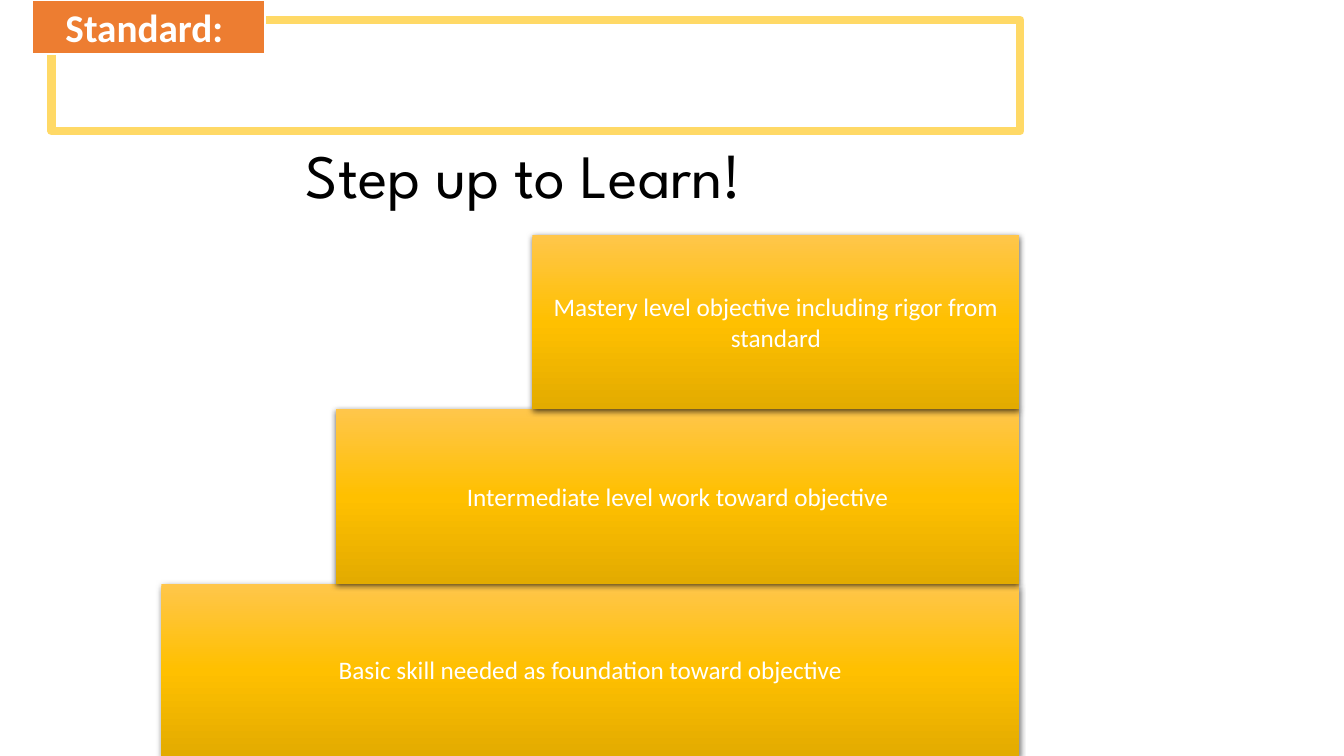
import copy

import pptx
import pptx.dml.color
import pptx.enum.shapes
import pptx.enum.text
import pptx.oxml
import pptx.oxml.ns
import pptx.util

Inches = pptx.util.Inches
Pt = pptx.util.Pt

# Content
TITLE = "Step up to Learn!"
STANDARD_LABEL = "Standard: "
STEPS = [  # top step first: text, left edge
    ("Mastery level objective including rigor from standard", 5.28),
    ("Intermediate level work toward objective", 3.33),
    ("Basic skill needed as foundation toward objective", 1.6),
]
STEP_GRADIENT = [(0, "FFC64B"), (0.5, "FFC000"), (1, "E3AB00")]

# Layout
SLIDE_WIDTH, SLIDE_HEIGHT = 13.33, 7.5
STAIRS_TOP, STAIRS_RIGHT, STEP_HEIGHT = 2.33, 10.11, 1.73

STEP_SHADOW = (
    '<a:outerShdw xmlns:a="http://schemas.openxmlformats.org/drawingml/2006/main"'
    ' blurRad="57150" dist="19050" dir="5400000" algn="ctr" rotWithShape="0">'
    '<a:srgbClr val="000000"><a:alpha val="63000"/></a:srgbClr></a:outerShdw>'
)


def color(hex_string):
    return pptx.dml.color.RGBColor.from_string(hex_string)


def write(shape, text, *, size, font="Calibri", ink="FFFFFF", bold=False, spacing=None):
    frame = shape.text_frame
    frame.word_wrap = True
    frame.vertical_anchor = pptx.enum.text.MSO_ANCHOR.MIDDLE
    paragraph = frame.paragraphs[0]
    paragraph.alignment = pptx.enum.text.PP_ALIGN.CENTER
    paragraph.line_spacing = spacing
    run = paragraph.add_run()
    run.text = text
    run.font.size = Pt(size)
    run.font.name = font
    run.font.bold = bold
    run.font.color.rgb = color(ink)


def add_box(slide, left, top, width, height, fill=None, line=None, line_width=0):
    box = slide.shapes.add_shape(
        pptx.enum.shapes.MSO_SHAPE.RECTANGLE,
        Inches(left), Inches(top), Inches(width), Inches(height))
    box.shadow.inherit = False
    if fill:
        box.fill.solid()
        box.fill.fore_color.rgb = color(fill)
    if line:
        box.line.color.rgb = color(line)
        box.line.width = Pt(line_width)
    else:
        box.line.fill.background()
    return box


def style_step(step):
    # Vertical three-stop gradient
    step.fill.gradient()
    step.fill.gradient_angle = 270
    properties = step._element.spPr
    first_stop = properties.find(".//" + pptx.oxml.ns.qn("a:gs"))
    first_stop.addnext(copy.deepcopy(first_stop))
    for stop, (position, shade) in zip(step.fill.gradient_stops, STEP_GRADIENT):
        stop.position = position
        stop.color.rgb = color(shade)
    # Soft shadow below
    effects = properties.find(pptx.oxml.ns.qn("a:effectLst"))
    effects.append(pptx.oxml.parse_xml(STEP_SHADOW))


def main():
    deck = pptx.Presentation()
    deck.slide_width, deck.slide_height = Inches(SLIDE_WIDTH), Inches(SLIDE_HEIGHT)
    slide = deck.slides.add_slide(deck.slide_layouts[5])

    # Title
    title = slide.shapes.title
    title.left, title.top = Inches(0.89), Inches(1.29)
    title.width, title.height = Inches(8.62), Inches(0.97)
    write(title, TITLE, size=44, font="League Spartan", ink="000000", spacing=0.9)

    # Standard frame and its label
    add_box(slide, 0.51, 0.2, 9.61, 1.1, fill="FFFFFF", line="FFD966", line_width=6)
    label = add_box(slide, 0.32, 0, 2.31, 0.54, fill="ED7D31", line="FFFFFF", line_width=1.5)
    write(label, STANDARD_LABEL, size=28, bold=True)

    # Stairs, drawn from the bottom step up
    for level, (text, left) in reversed(list(enumerate(STEPS))):
        top = STAIRS_TOP + level * STEP_HEIGHT
        height = min(STEP_HEIGHT, SLIDE_HEIGHT - top)
        step = add_box(slide, left, top, STAIRS_RIGHT - left, height)
        style_step(step)
        write(step, text, size=18)

    deck.save("out.pptx")


if __name__ == "__main__":
    main()
